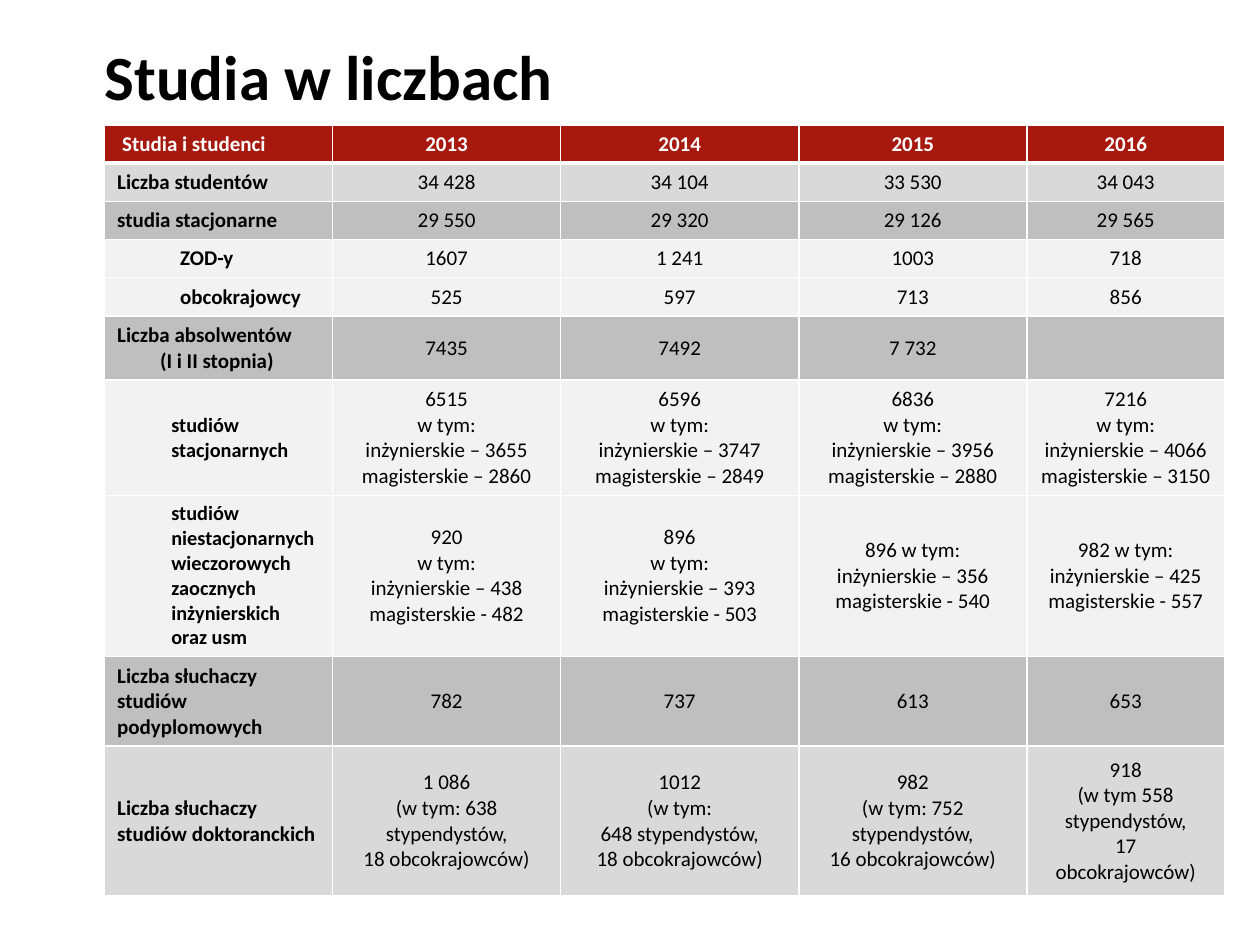
"""Build a slide with a table of student numbers by year."""
from lxml.etree import SubElement
from pptx import Presentation
from pptx.dml.color import RGBColor as RGB
from pptx.enum.text import MSO_ANCHOR as Anchor, PP_ALIGN as Align
from pptx.oxml.ns import qn
from pptx.util import Inches, Pt

FONT = "Calibri"
BLACK = RGB(0, 0, 0)
WHITE = RGB(255, 255, 255)
RED = RGB(0xA7, 0x19, 0x0E)
LIGHT = RGB(0xF2, 0xF2, 0xF2)
MEDIUM = RGB(0xD9, 0xD9, 0xD9)
DARK = RGB(0xBF, 0xBF, 0xBF)

LEFT, TOP = 0.83, 0.99
COLUMN_WIDTHS = [1.81, 1.81, 1.89, 1.81, 1.57]
LINE_ROW = 0.3

# Each row: height, fill, label size, label paragraphs as (indent, text), yearly values.
ROWS = [
    (LINE_ROW, RED, 12, [(0.04, "Studia i studenci")], ["2013", "2014", "2015", "2016"]),
    (LINE_ROW, MEDIUM, 12, [(0, "Liczba studentów")],
     ["34 428", "34 104", "33 530", "34 043"]),
    (LINE_ROW, DARK, 12, [(0, "studia stacjonarne")],
     ["29 550", "29 320", "29 126", "29 565"]),
    (LINE_ROW, LIGHT, 12, [(0.5, "ZOD-y")], ["1607", "1 241", "1003", "718"]),
    (LINE_ROW, LIGHT, 12, [(0.5, "obcokrajowcy")], ["525", "597", "713", "856"]),
    (0.51, DARK, 12, [(0, "Liczba absolwentów"), (0.34, "(I i II stopnia)")],
     ["7435", "7492", "7 732", ""]),
    (0.91, LIGHT, 11.6, [(0.43, "studiów\vstacjonarnych")],
     ["6515\nw tym:\ninżynierskie – 3655\nmagisterskie – 2860",
      "6596\nw tym:\ninżynierskie – 3747\nmagisterskie – 2849",
      "6836\nw tym:\ninżynierskie – 3956\nmagisterskie – 2880",
      "7216\nw tym:\ninżynierskie – 4066\nmagisterskie – 3150"]),
    (1.28, LIGHT, 11.6,
     [(0.43, "studiów\vniestacjonarnych\vwieczorowych\vzaocznych\vinżynierskich\voraz usm")],
     ["920\nw tym:\ninżynierskie – 438\nmagisterskie - 482",
      "896\nw tym:\ninżynierskie – 393\nmagisterskie - 503",
      "896 w tym:\ninżynierskie – 356\nmagisterskie - 540",
      "982 w tym:\ninżynierskie – 425\nmagisterskie - 557"]),
    (0.71, DARK, 12, [(0, "Liczba słuchaczy studiów podyplomowych")],
     ["782", "737", "613", "653"]),
    (1.19, MEDIUM, 12, [(0, "Liczba słuchaczy studiów doktoranckich")],
     ["1 086\n(w tym: 638 stypendystów,\v18 obcokrajowców)",
      "1012\n(w tym:\v648 stypendystów,\n18 obcokrajowców)",
      "982\n(w tym: 752 stypendystów,\v16 obcokrajowców)",
      "918\n(w tym 558 stypendystów,\v17\vobcokrajowców)"]),
]


def write_line(paragraph, text, size, color, bold, align, indent=0):
    """Fill a paragraph with runs, one for each part between line breaks."""
    paragraph.alignment = align
    properties = paragraph._p.get_or_add_pPr()
    properties.set("marL", str(Inches(indent)))
    properties.set("indent", "0")
    for index, part in enumerate(text.split("\v")):
        if index:
            paragraph.add_line_break()
        run = paragraph.add_run()
        run.text = part
        run.font.name = FONT
        run.font.size = Pt(size)
        run.font.bold = bold
        run.font.color.rgb = color


def write_cell(cell, lines, size, color, bold, align):
    """Write (indent, text) lines as the paragraphs of a cell."""
    frame = cell.text_frame
    for index, (indent, text) in enumerate(lines):
        paragraph = frame.add_paragraph() if index else frame.paragraphs[0]
        if text:
            write_line(paragraph, text, size, color, bold, align, indent)


def style_cell(cell, fill, top, bottom):
    """Give a cell its white borders, fill and middle anchor."""
    properties = cell._tc.get_or_add_tcPr()
    for side, width in (("L", 1), ("R", 1), ("T", top), ("B", bottom)):
        border = SubElement(properties, qn(f"a:ln{side}"), w=str(Pt(width)))
        solid = SubElement(border, qn("a:solidFill"))
        SubElement(solid, qn("a:srgbClr"), val=str(WHITE))
    cell.fill.solid()
    cell.fill.fore_color.rgb = fill
    cell.vertical_anchor = Anchor.MIDDLE


def add_title(slide, text):
    """Place and format the slide title."""
    title = slide.shapes.title
    title.left, title.top = Inches(LEFT), Inches(0.13)
    title.width, title.height = Inches(9.04), Inches(0.94)
    frame = title.text_frame
    frame.margin_left = 0
    frame.vertical_anchor = Anchor.MIDDLE
    write_line(frame.paragraphs[0], text, 36, BLACK, True, Align.LEFT)


def add_numbers_table(slide):
    """Add the table with one row per group and one column per year."""
    width, height = sum(COLUMN_WIDTHS), sum(row[0] for row in ROWS)
    table = slide.shapes.add_table(
        len(ROWS), len(COLUMN_WIDTHS),
        Inches(LEFT), Inches(TOP), Inches(width), Inches(height)).table
    table.horz_banding = False
    for column, column_width in zip(table.columns, COLUMN_WIDTHS):
        column.width = Inches(column_width)
    for index, (row_height, fill, label_size, label, values) in enumerate(ROWS):
        row = table.rows[index]
        row.height = Inches(row_height)
        header = index == 0
        color = WHITE if header else BLACK
        for cell in row.cells:
            style_cell(cell, fill, 3 if index == 1 else 1, 3 if header else 1)
        write_cell(row.cells[0], label, label_size, color, True, Align.LEFT)
        for column, value in enumerate(values, 1):
            lines = [(0, line) for line in value.split("\n")]
            write_cell(row.cells[column], lines, 12, color, header, Align.CENTER)


def main():
    """Build and save the presentation."""
    deck = Presentation()
    deck.slide_width, deck.slide_height = Inches(10), Inches(7.5)
    slide = deck.slides.add_slide(deck.slide_layouts[5])
    add_title(slide, "Studia w liczbach")
    add_numbers_table(slide)
    deck.save("out.pptx")


if __name__ == "__main__":
    main()
